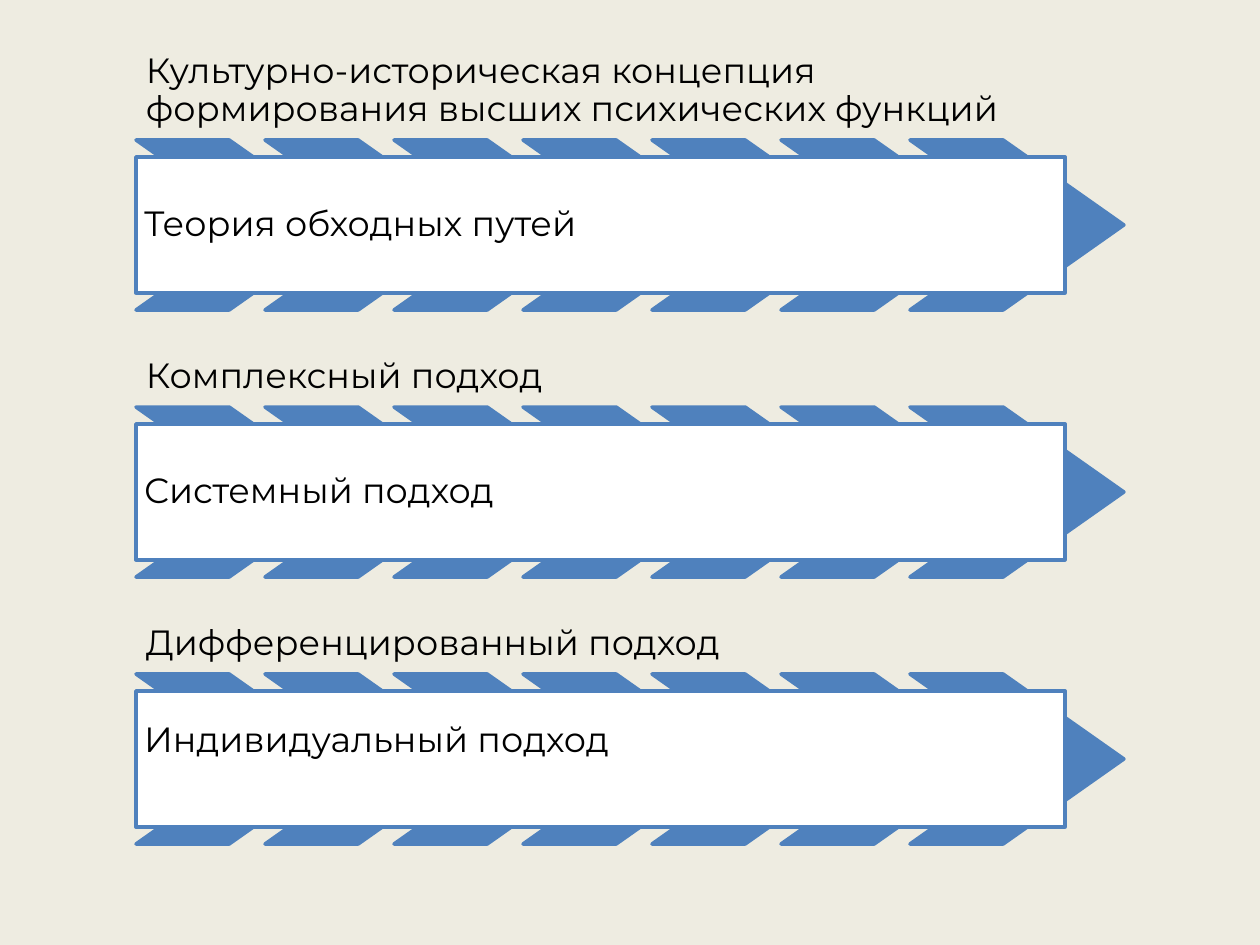
from dataclasses import dataclass

from pptx import Presentation
from pptx.dml.color import RGBColor
from pptx.enum.shapes import MSO_SHAPE
from pptx.enum.text import MSO_ANCHOR, PP_ALIGN
from pptx.util import Pt

APPROACHES = [
    {"heading": "Культурно-историческая концепция формирования высших психических функций",
     "panel": "Теория обходных путей", "bottom_inset": 8},
    {"heading": "Комплексный подход", "panel": "Системный подход", "bottom_inset": 8},
    {"heading": "Дифференцированный подход", "panel": "Индивидуальный подход",
     "bottom_inset": 44},
]


@dataclass(frozen=True)
class Theme:
    background: RGBColor = RGBColor(0xEE, 0xEC, 0xE1)
    accent: RGBColor = RGBColor(0x4F, 0x81, 0xBD)
    panel: RGBColor = RGBColor(0xFF, 0xFF, 0xFF)
    ink: RGBColor = RGBColor(0, 0, 0)
    font: str = "Montserrat"
    size: int = 20
    outline: int = 2


THEME = Theme()
PX = 914400 / 126
SLIDE_SIZE = (1260, 945)
LEFT = 136
FIRST_TOP, BAND_PITCH = 140, 267
HEADING_SIZE, HEADING_RISE = (917, 83), 84
CHEVRON_COUNT, CHEVRON_STEP, CHEVRON_SIZE = 7, 129, (214, 170)
CHEVRON_POINT = 0.71
PANEL_SIZE, PANEL_DROP = (929, 136), 17


def px(*lengths):
    return [round(length * PX) for length in lengths]


def add_outlined(slide, preset, fill, left, top, size):
    outlined = slide.shapes.add_shape(preset, *px(left, top, *size))
    outlined.shadow.inherit = False
    outlined.fill.solid()
    outlined.fill.fore_color.rgb = fill
    outlined.line.color.rgb = THEME.accent
    outlined.line.width = Pt(THEME.outline)
    return outlined


def write(holder, wording, anchor, inset, bottom_inset):
    frame = holder.text_frame
    side, bottom = px(inset, bottom_inset)
    frame_format = {"word_wrap": True, "vertical_anchor": anchor, "margin_left": side,
                    "margin_right": side, "margin_top": side, "margin_bottom": bottom}
    for key, value in frame_format.items():
        setattr(frame, key, value)
    paragraph = frame.paragraphs[0]
    paragraph.text = wording
    paragraph.alignment = PP_ALIGN.LEFT
    paragraph.line_spacing = 0.9
    for key, value in {"name": THEME.font, "size": Pt(THEME.size)}.items():
        setattr(paragraph.font, key, value)
    paragraph.font.color.rgb = THEME.ink


def add_band(slide, approach, top):
    heading = slide.shapes.add_textbox(*px(LEFT, top - HEADING_RISE, *HEADING_SIZE))
    write(heading, approach["heading"], MSO_ANCHOR.BOTTOM, 10, 10)
    for column in range(CHEVRON_COUNT):
        chevron = add_outlined(slide, MSO_SHAPE.CHEVRON, THEME.accent,
                               LEFT + column * CHEVRON_STEP, top, CHEVRON_SIZE)
        chevron.adjustments[0] = CHEVRON_POINT
    panel = add_outlined(slide, MSO_SHAPE.RECTANGLE, THEME.panel,
                         LEFT, top + PANEL_DROP, PANEL_SIZE)
    write(panel, approach["panel"], MSO_ANCHOR.MIDDLE, 8, approach["bottom_inset"])


def main():
    deck = Presentation()
    deck.slide_width, deck.slide_height = px(*SLIDE_SIZE)
    slide = deck.slides.add_slide(deck.slide_layouts[6])
    slide.background.fill.solid()
    slide.background.fill.fore_color.rgb = THEME.background
    for row, approach in enumerate(APPROACHES):
        add_band(slide, approach, FIRST_TOP + row * BAND_PITCH)
    deck.save("out.pptx")


if __name__ == "__main__":
    main()
